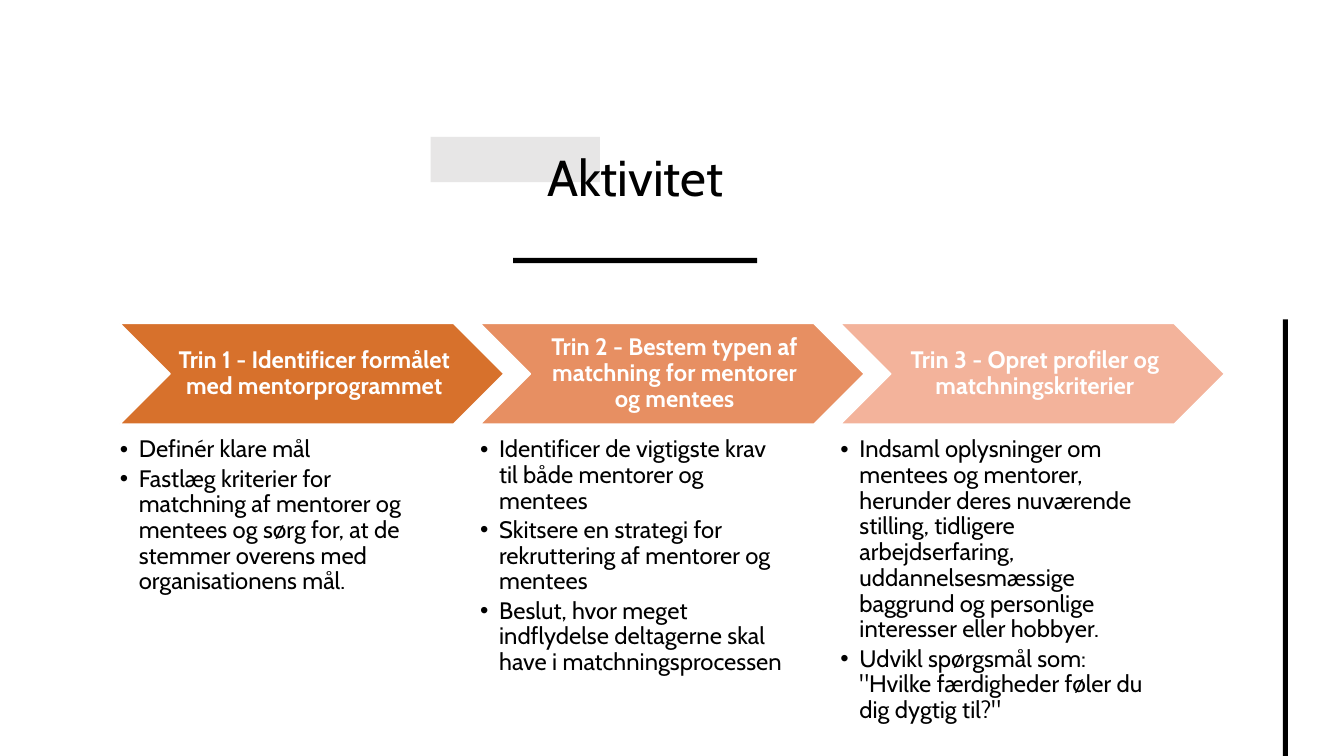
import pptx
import pptx.util
import pptx.dml.color
import pptx.enum.shapes
import pptx.enum.text
from lxml import etree

Cm, Pt = pptx.util.Cm, pptx.util.Pt
SHAPE = pptx.enum.shapes.MSO_SHAPE
ANCHOR = pptx.enum.text.MSO_ANCHOR
CENTER = pptx.enum.text.PP_ALIGN.CENTER
FONT = "Cabin"
NS = "http://schemas.openxmlformats.org/drawingml/2006/main"

STEPS = [
    ("D7712C", "Trin 1 - Identificer formålet med mentorprogrammet", [
        "Definér klare mål",
        "Fastlæg kriterier for matchning af mentorer og mentees og sørg for, "
        "at de stemmer overens med organisationens mål.",
    ]),
    ("E78F62", "Trin 2 - Bestem typen af matchning for mentorer og mentees", [
        "Identificer de vigtigste krav til både mentorer og mentees",
        "Skitsere en strategi for rekruttering af mentorer og mentees",
        "Beslut, hvor meget indflydelse deltagerne skal have i matchningsprocessen",
    ]),
    ("F3B39B", "Trin 3 - Opret profiler og matchningskriterier", [
        "Indsaml oplysninger om mentees og mentorer, herunder deres nuværende "
        "stilling, tidligere arbejdserfaring, uddannelsesmæssige baggrund og "
        "personlige interesser eller hobbyer.",
        'Udvikl spørgsmål som: "Hvilke færdigheder føler du dig dygtig til?"',
    ]),
]


def color(hex_code):
    return pptx.dml.color.RGBColor.from_string(hex_code)


def add_block(s, kind, x, y, w, h, fill):
    sp = s.shapes.add_shape(kind, Cm(x), Cm(y), Cm(w), Cm(h))
    sp.shadow.inherit = False
    sp.fill.solid()
    sp.fill.fore_color.rgb = color(fill)
    sp.line.fill.background()
    return sp


def set_margins(tf, left, other):
    tf.margin_left = Cm(left)
    tf.margin_top = tf.margin_right = tf.margin_bottom = Cm(other)


def format_paragraph(p, size, hex_code, bold=False):
    p.line_spacing = 0.9
    for r in p.runs:
        r.font.name = FONT
        r.font.size = Pt(size)
        r.font.bold = bold
        r.font.color.rgb = color(hex_code)


def add_bullet(p, indent):
    pPr = p._p.get_or_add_pPr()
    pPr.set("marL", str(Cm(indent)))
    pPr.set("indent", str(-Cm(indent)))
    etree.SubElement(pPr, f"{{{NS}}}buFont", typeface="Arial")
    etree.SubElement(pPr, f"{{{NS}}}buChar", char="•")


def title_region(s, x, y, w, h):
    # Grey accent behind the title
    add_block(s, SHAPE.RECTANGLE, x + 6.18, y + 0.48, 4.27, 1.14, "E7E6E6")

    # Title
    sp = s.shapes.add_textbox(Cm(x), Cm(y), Cm(w), Cm(h))
    tf = sp.text_frame
    tf.text = "Aktivitet"
    tf.word_wrap = True
    tf.vertical_anchor = ANCHOR.BOTTOM
    p = tf.paragraphs[0]
    p.alignment = CENTER
    format_paragraph(p, 36, "000000")

    # Centred rule under the title
    rule = 6.15
    add_block(s, SHAPE.RECTANGLE, x + (w - rule) / 2, y + h + 1.14, rule, 0.13, "000000")


def step_column(s, x, y, w, step):
    fill, heading, points = step

    # Chevron with heading
    sp = add_block(s, SHAPE.CHEVRON, x, y, w, 2.54, fill)
    sp.line.color.rgb = color("FFFFFF")
    sp.line.width = Pt(1)
    tf = sp.text_frame
    tf.text = heading
    tf.word_wrap = True
    tf.vertical_anchor = ANCHOR.MIDDLE
    set_margins(tf, 0.18, 0.06)
    p = tf.paragraphs[0]
    p.alignment = CENTER
    format_paragraph(p, 17, "FFFFFF", bold=True)

    # Bullet points
    sp = s.shapes.add_textbox(Cm(x), Cm(y + 2.87), Cm(w * 0.8), Cm(6.99))
    tf = sp.text_frame
    tf.text = "\n".join(points)
    tf.word_wrap = True
    set_margins(tf, 0, 0)
    for p in tf.paragraphs:
        add_bullet(p, 0.48)
        format_paragraph(p, 17, "000000")
        p.space_after = Pt(2.5)


def main():
    prs = pptx.Presentation()
    prs.slide_width, prs.slide_height = Cm(33.87), Cm(19.05)
    s = prs.slides.add_slide(prs.slide_layouts[6])

    title_region(s, 4.67, 2.97, 22.68, 2.39)

    # Vertical bar at the right edge
    add_block(s, SHAPE.RECTANGLE, 32.33, 8.05, 0.13, 11, "000000")

    # Three steps at equal distance
    for i, step in enumerate(STEPS):
        step_column(s, 3.02 + i * 9.08, 8.15, 9.68, step)

    prs.save("out.pptx")


if __name__ == "__main__":
    main()
